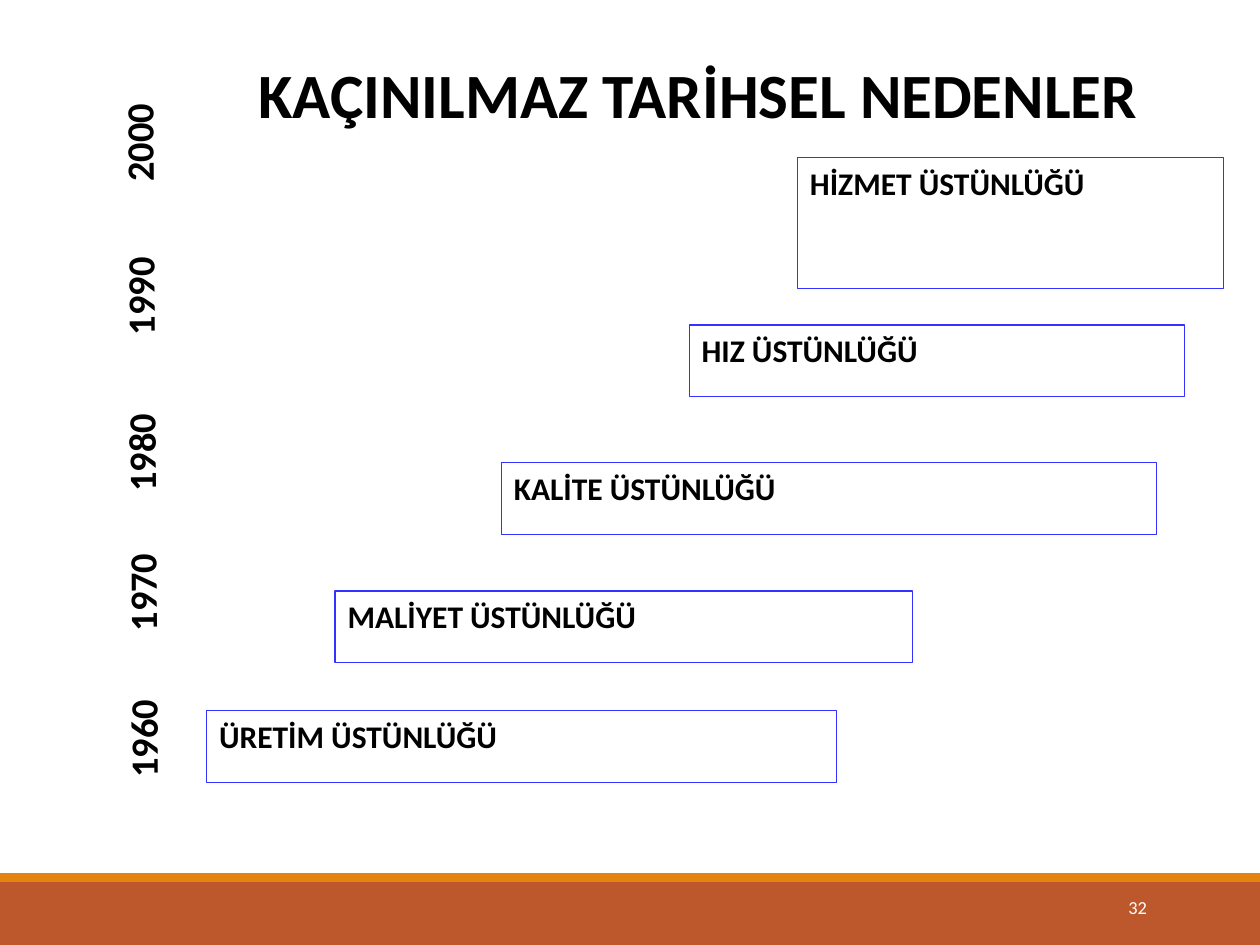
import pptx
import pptx.util
import pptx.dml.color
import pptx.enum.shapes
import pptx.enum.text
import pptx.oxml.ns
from lxml import etree

Inches = pptx.util.Inches
Pt = pptx.util.Pt
RGBColor = pptx.dml.color.RGBColor
Align = pptx.enum.text.PP_ALIGN
Anchor = pptx.enum.text.MSO_ANCHOR

BLACK = RGBColor(0, 0, 0)
WHITE = RGBColor(255, 255, 255)
BLUE = RGBColor(0x33, 0x33, 0xFF)
RUST = RGBColor(0xBD, 0x58, 0x2C)
AMBER = RGBColor(0xE4, 0x83, 0x12)

STEPS = [
    ("HİZMET ÜSTÜNLÜĞÜ", 6.33, 1.25, 3.38, 1.04),
    ("HIZ ÜSTÜNLÜĞÜ", 5.47, 2.58, 3.93, 0.57),
    ("KALİTE ÜSTÜNLÜĞÜ", 3.98, 3.67, 5.2, 0.57),
    ("MALİYET ÜSTÜNLÜĞÜ", 2.66, 4.69, 4.58, 0.57),
    ("ÜRETİM ÜSTÜNLÜĞÜ", 1.64, 5.64, 5, 0.57),
]
YEARS = ["1960", "1970", "1980", "1990", "2000"]
STOPS = [1.16, 2.27, 3.51, 4.73]


class Board:
    """Draws styled elements on the current slide."""

    font = "Calibri"

    def __init__(self, slide):
        self.slide = slide
        self.shapes = slide.shapes

    def text(self, shape, text, size, color=BLACK, bold=True, align=Align.LEFT, stops=()):
        frame = shape.text_frame
        frame.text = text
        frame.word_wrap = True
        frame.auto_size = pptx.enum.text.MSO_AUTO_SIZE.NONE
        frame.vertical_anchor = Anchor.TOP
        para = frame.paragraphs[0]
        para.alignment = align
        para.space_before = Pt(0)
        if stops:
            tabs = etree.SubElement(para._p.get_or_add_pPr(), pptx.oxml.ns.qn("a:tabLst"))
            for stop in stops:
                etree.SubElement(tabs, pptx.oxml.ns.qn("a:tab"), pos=str(Inches(stop)), algn="l")
        for run in para.runs:
            run.font.name = self.font
            run.font.size = Pt(size)
            run.font.bold = bold
            run.font.color.rgb = color

    def title(self, text, x, y, w, h):
        shape = self.shapes.title
        shape.left, shape.top = Inches(x), Inches(y)
        shape.width, shape.height = Inches(w), Inches(h)
        self.text(shape, text, 36)

    def label(self, text, x, y, w, h, size, turn=0, **style):
        shape = self.shapes.add_textbox(Inches(x), Inches(y), Inches(w), Inches(h))
        shape.rotation = turn
        self.text(shape, text, size, **style)

    def rect(self, x, y, w, h):
        kind = pptx.enum.shapes.MSO_SHAPE.RECTANGLE
        shape = self.shapes.add_shape(kind, Inches(x), Inches(y), Inches(w), Inches(h))
        shape.shadow.inherit = False
        return shape

    def band(self, y, h, color):
        shape = self.rect(0, y, 10, h)
        shape.fill.solid()
        shape.fill.fore_color.rgb = color
        shape.line.fill.background()

    def step(self, text, x, y, w, h):
        shape = self.rect(x, y, w, h)
        shape.fill.background()
        shape.line.color.rgb = BLUE
        shape.line.width = Pt(0.75)
        self.text(shape, text, 18)


def main():
    deck = pptx.Presentation()
    deck.slide_width, deck.slide_height = Inches(10), Inches(7.5)
    board = Board(deck.slides.add_slide(deck.slide_layouts[5]))
    board.band(7, 0.5, RUST)
    board.band(6.93, 0.07, AMBER)
    board.title("KAÇINILMAZ TARİHSEL NEDENLER", 1.95, 0.39, 7.42, 0.71)
    board.label("\t".join(YEARS), -1.8, 3.12, 5.83, 0.47, 22, turn=269.6, stops=STOPS)
    for step in STEPS:
        board.step(*step)
    board.label("32", 8.12, 7.06, 1.08, 0.4, 10.5, color=WHITE, bold=False, align=Align.RIGHT)
    deck.save("out.pptx")


if __name__ == "__main__":
    main()
